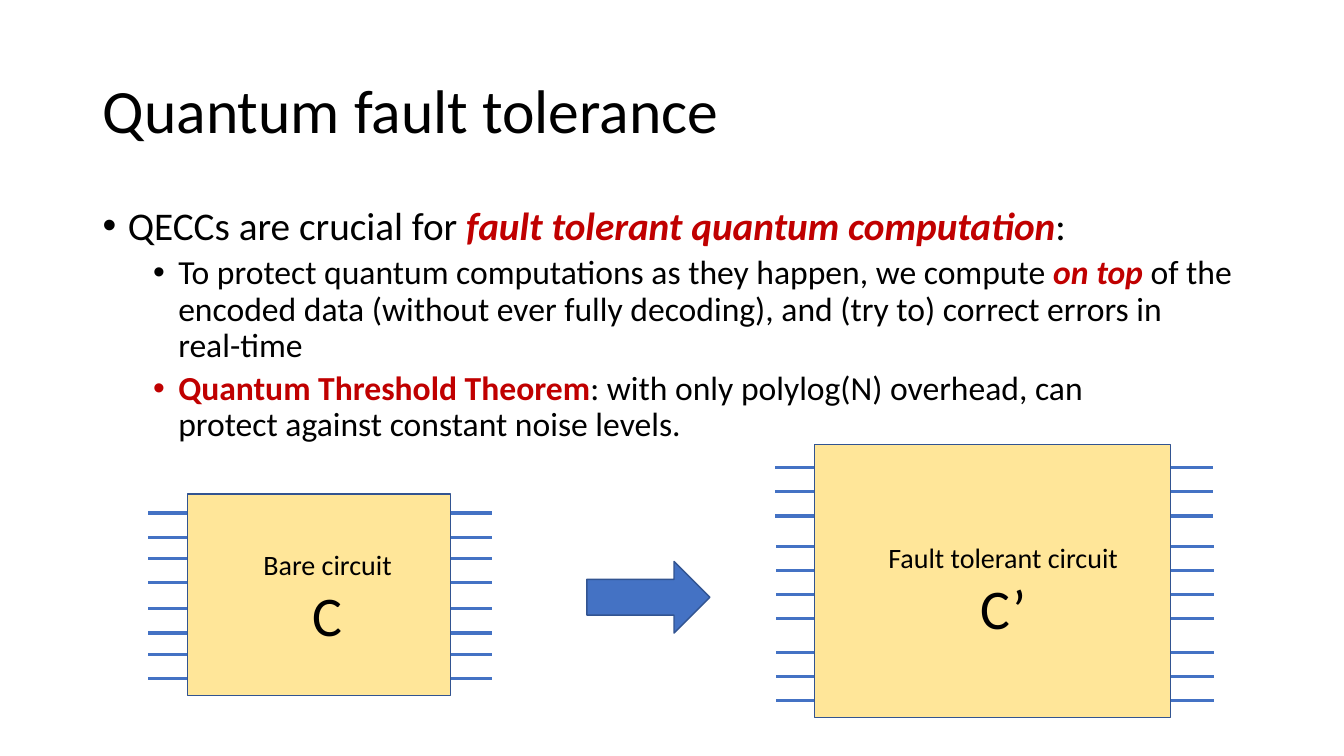
from dataclasses import dataclass

from lxml import etree
from pptx import Presentation
from pptx.dml.color import RGBColor as RGB
from pptx.enum.shapes import MSO_CONNECTOR as CONN, MSO_SHAPE as SHAPE
from pptx.enum.text import MSO_ANCHOR as ANCHOR, MSO_AUTO_SIZE as AUTO, PP_ALIGN as ALIGN
from pptx.oxml.ns import qn
from pptx.util import Inches, Pt


@dataclass(frozen=True)
class Theme:
    font: str = "Calibri"
    ink: RGB = RGB(0x00, 0x00, 0x00)
    accent: RGB = RGB(0xC0, 0x00, 0x00)
    blue: RGB = RGB(0x44, 0x72, 0xC4)
    edge: RGB = RGB(0x32, 0x54, 0x91)
    chip: RGB = RGB(0xFF, 0xE6, 0x99)
    title: int = 44
    symbol: int = 40
    levels: tuple = (28, 24)
    label: int = 20
    wire: float = 2.25
    outline: float = 1


class SlideBuilder:
    """Draws styled elements on the current slide."""

    def __init__(self, prs, theme):
        self.theme = theme
        self.s = prs.slides.add_slide(prs.slide_layouts[5])

    def style(self, r, size, color=None, bold=False, italic=False):
        f = r.font
        f.name, f.size, f.bold, f.italic = self.theme.font, Pt(size), bold, italic
        f.color.rgb = color or self.theme.ink

    def title(self, text, box):
        sp = self.s.shapes.title
        sp.left, sp.top, sp.width, sp.height = map(Inches, box)
        tf = sp.text_frame
        tf.text = text
        tf.word_wrap, tf.auto_size, tf.vertical_anchor = True, AUTO.NONE, ANCHOR.MIDDLE
        p = tf.paragraphs[0]
        p.alignment, p.line_spacing = ALIGN.LEFT, 0.9
        self.style(p.runs[0], self.theme.title)

    def text_frame(self, box):
        tf = self.s.shapes.add_textbox(*map(Inches, box)).text_frame
        tf.word_wrap = True
        return tf

    def bullets(self, items, box):
        tf = self.text_frame(box)
        for i, (level, parts) in enumerate(items):
            p = tf.add_paragraph() if i else tf.paragraphs[0]
            p.level, p.line_spacing = level, 0.9
            p.space_before = Pt(5 if level else 10)
            pPr = p._p.get_or_add_pPr()
            pPr.set("marL", str(Inches(0.25 + 0.5 * level)))
            pPr.set("indent", str(Inches(-0.25)))
            etree.SubElement(pPr, qn("a:buFont"), typeface="Arial")
            etree.SubElement(pPr, qn("a:buChar"), char="•")
            for text, *emphasis in parts:
                for j, line in enumerate(text.split("\n")):
                    if j:
                        p.add_line_break()
                    r = p.add_run()
                    r.text = line
                    self.style(r, self.theme.levels[level], *emphasis)

    def label(self, caption, symbol, box):
        tf = self.text_frame(box)
        tf.text = f"{caption}\n{symbol}"
        for p, size in zip(tf.paragraphs, (self.theme.label, self.theme.symbol)):
            p.alignment = ALIGN.CENTER
            self.style(p.runs[0], size)

    def shape(self, kind, fill, box):
        sp = self.s.shapes.add_shape(kind, *map(Inches, box))
        sp.shadow.inherit = False
        sp.fill.solid()
        sp.fill.fore_color.rgb = fill
        sp.line.color.rgb = self.theme.edge
        sp.line.width = Pt(self.theme.outline)

    def wires(self, left, top, length, offsets):
        for dy in offsets:
            y = Inches(top + dy)
            c = self.s.shapes.add_connector(
                CONN.STRAIGHT, Inches(left), y, Inches(left + length), y)
            c.line.color.rgb = self.theme.blue
            c.line.width = Pt(self.theme.wire)
            etree.SubElement(c._element.spPr, qn("a:effectLst"))


def main():
    prs = Presentation()
    prs.slide_width, prs.slide_height = Inches(13.33), Inches(7.5)
    theme = Theme()
    b = SlideBuilder(prs, theme)
    strong, strong_italic = (theme.accent, True), (theme.accent, True, True)

    b.title("Quantum fault tolerance", (0.92, 0.4, 11.5, 1.45))
    b.bullets([
        (0, [("QECCs are crucial for ",),
             ("fault tolerant quantum computation", *strong_italic),
             (":",)]),
        (1, [("To protect quantum computations as they happen, we compute ",),
             ("on top ", *strong_italic),
             ("of the encoded data (without ever fully decoding), "
              "and (try to) correct errors in \nreal-time",)]),
        (1, [("Quantum Threshold Theorem", *strong),
             (": with only polylog(N) overhead, can \n"
              "protect against constant noise levels.",)]),
    ], (0.92, 2, 11.5, 4.76))

    for top in (5.09, 6.04):
        b.wires(1.47, top, 3.41, (0, 0.24, 0.45, 0.69))
    for left, top, count in ((7.69, 4.64, 3), (7.7, 5.42, 4), (7.7, 6.47, 3)):
        b.wires(left, top, 4.34, [0.24 * i for i in range(count)])

    b.shape(SHAPE.RECTANGLE, theme.chip, (1.86, 4.9, 2.61, 2))
    b.shape(SHAPE.RIGHT_ARROW, theme.blue, (5.82, 5.57, 1.22, 0.71))
    b.shape(SHAPE.RECTANGLE, theme.chip, (8.08, 4.41, 3.53, 2.71))
    b.label("Bare circuit", "C", (1.85, 5.38, 2.8, 1.11))
    b.label("Fault tolerant circuit", "C’", (8.55, 5.31, 2.8, 1.11))
    prs.save("out.pptx")


if __name__ == "__main__":
    main()
